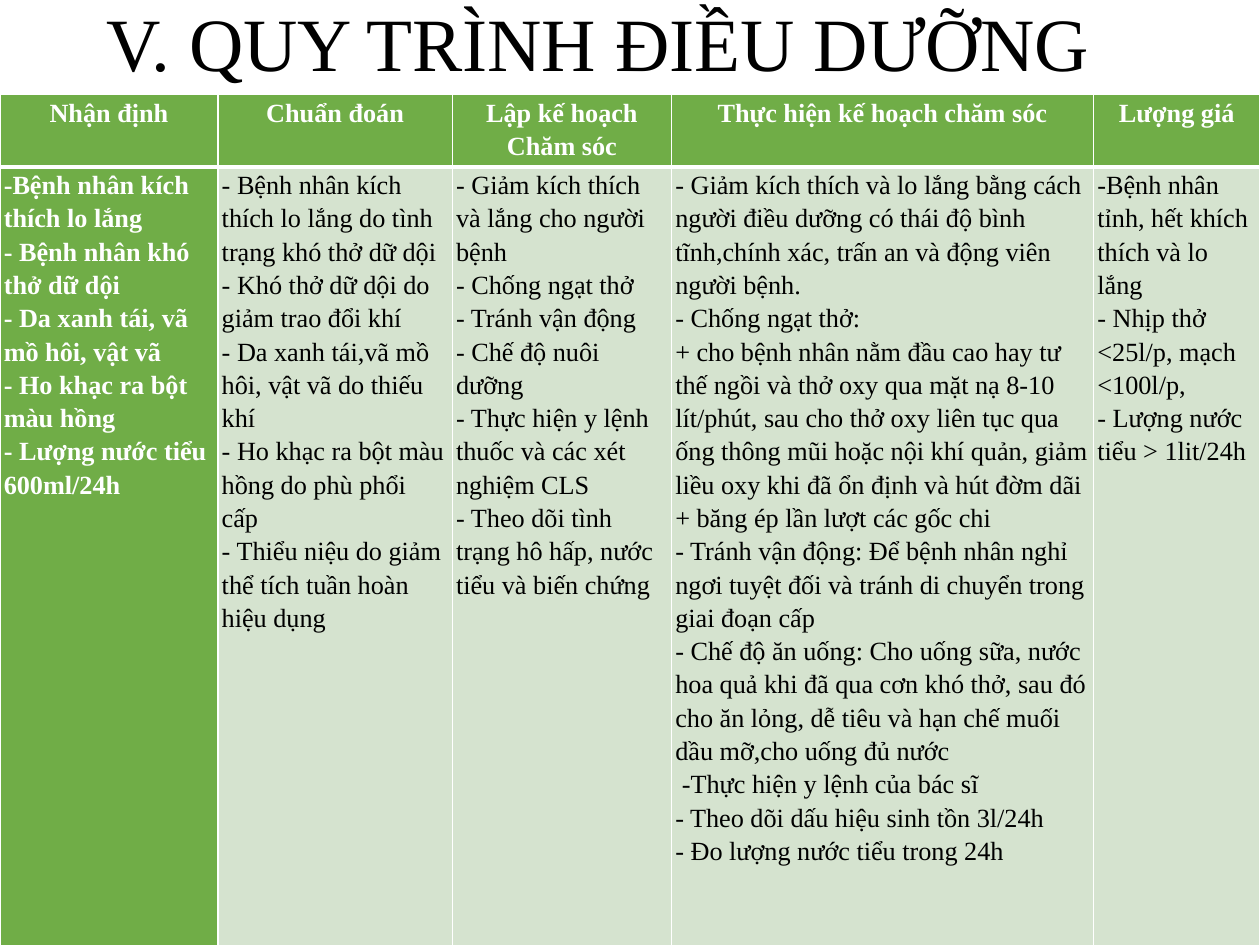
import pptx
import pptx.dml.color
import pptx.enum.text
import pptx.oxml
import pptx.oxml.ns
import pptx.util
from pptx.util import Inches

COLORS = {"green": "70AD47", "pale": "D5E3CF", "white": "FFFFFF", "black": "000000"}
FONT = "Times New Roman"
ALIGN = pptx.enum.text.PP_ALIGN

# Column width, header lines, body paragraphs (\v is a line break)
COLUMNS = [
    (1.73, ["Nhận định"], [
        "-Bệnh nhân kích thích lo lắng",
        "- Bệnh nhân khó thở dữ dội",
        "- Da xanh tái, vã mồ hôi, vật vã",
        "- Ho khạc ra bột màu hồng",
        "- Lượng nước tiểu 600ml/24h",
    ]),
    (1.86, ["Chuẩn đoán"], [
        "- Bệnh nhân kích thích lo lắng do tình trạng khó thở dữ dội",
        "- Khó thở dữ dội do giảm trao đổi khí",
        "- Da xanh tái,vã mồ hôi, vật vã do thiếu khí",
        "- Ho khạc ra bột màu hồng do phù phổi cấp",
        "- Thiểu niệu do giảm thể tích tuần hoàn hiệu dụng",
    ]),
    (1.74, ["Lập kế hoạch", "Chăm sóc"], [
        "- Giảm kích thích và lắng cho người bệnh",
        "- Chống ngạt thở",
        "- Tránh vận động",
        "- Chế độ nuôi dưỡng",
        "- Thực hiện y lệnh thuốc và các xét nghiệm CLS",
        "- Theo dõi tình trạng hô hấp, nước tiểu và biến chứng",
    ]),
    (3.35, ["Thực hiện kế hoạch chăm sóc"], [
        "- Giảm kích thích và lo lắng bằng cách người điều dưỡng có thái độ bình "
        "tĩnh,chính xác, trấn an và động viên người bệnh.\v- Chống ngạt thở:",
        "+ cho bệnh nhân nằm đầu cao hay tư thế ngồi và thở oxy qua mặt nạ 8-10 "
        "lít/phút, sau cho thở oxy liên tục qua ống thông mũi hoặc nội khí quản, "
        "giảm liều oxy khi đã ổn định và hút đờm dãi",
        "+ băng ép lần lượt các gốc chi",
        "- Tránh vận động: Để bệnh nhân nghỉ ngơi tuyệt đối và tránh di chuyển "
        "trong giai đoạn cấp",
        "- Chế độ ăn uống: Cho uống sữa, nước hoa quả khi đã qua cơn khó thở, sau "
        "đó cho ăn lỏng, dễ tiêu và hạn chế muối dầu mỡ,cho uống đủ nước",
        " -Thực hiện y lệnh của bác sĩ",
        "- Theo dõi dấu hiệu sinh tồn 3l/24h",
        "- Đo lượng nước tiểu trong 24h",
    ]),
    (1.32, ["Lượng giá"], [
        "-Bệnh nhân tỉnh, hết khích thích và lo lắng",
        "- Nhịp thở <25l/p, mạch <100l/p,",
        "- Lượng nước tiểu > 1lit/24h",
    ]),
]


def write(frame, lines, size, color, bold, align, spacing):
    frame.text = "\n".join(lines)
    for para in frame.paragraphs:
        para.alignment = align
        para.line_spacing = spacing
        para.font.name = FONT
        para.font.size = pptx.util.Pt(size)
        para.font.bold = bold
        para.font.color.rgb = pptx.dml.color.RGBColor.from_string(COLORS[color])


def add_borders(cell, bottom):
    """Draw white cell borders, 1 pt except for the given bottom width."""
    props = cell._tc.get_or_add_tcPr()
    for index, (side, width) in enumerate(
        [("lnL", 1), ("lnR", 1), ("lnT", 1), ("lnB", bottom)]
    ):
        props.insert(index, pptx.oxml.parse_xml(
            f'<a:{side} {pptx.oxml.ns.nsdecls("a")} w="{pptx.util.Pt(width)}">'
            f'<a:solidFill><a:srgbClr val="{COLORS["white"]}"/></a:solidFill></a:{side}>'
        ))


deck = pptx.Presentation()
deck.slide_width, deck.slide_height = Inches(10), Inches(7.5)
page = deck.slides.add_slide(deck.slide_layouts[6])

title = page.shapes.add_textbox(Inches(0.75), Inches(0), Inches(8.62), Inches(0.75))
title.text_frame.word_wrap = True
title.text_frame.vertical_anchor = pptx.enum.text.MSO_ANCHOR.MIDDLE
write(title.text_frame, ["V. QUY TRÌNH ĐIỀU DƯỠNG"], 43, "black", False, ALIGN.LEFT, 0.9)

table = page.shapes.add_table(
    2, len(COLUMNS), Inches(0), Inches(0.75), Inches(10), Inches(6.8)
).table
table.rows[0].height, table.rows[1].height = Inches(0.54), Inches(6.26)

for col, (width, header, body) in enumerate(COLUMNS):
    table.columns[col].width = Inches(width)
    for row, lines in enumerate([header, body]):
        cell = table.cell(row, col)
        strong = row == 0 or col == 0
        cell.margin_left = cell.margin_right = Inches(0.03)
        cell.margin_top = cell.margin_bottom = Inches(0)
        cell.fill.solid()
        cell.fill.fore_color.rgb = pptx.dml.color.RGBColor.from_string(
            COLORS["green" if strong else "pale"]
        )
        add_borders(cell, 3 if row == 0 else 1)
        write(cell.text_frame, lines, 15, "white" if strong else "black", strong,
              ALIGN.CENTER if row == 0 else ALIGN.LEFT, 1.15)

deck.save("out.pptx")
